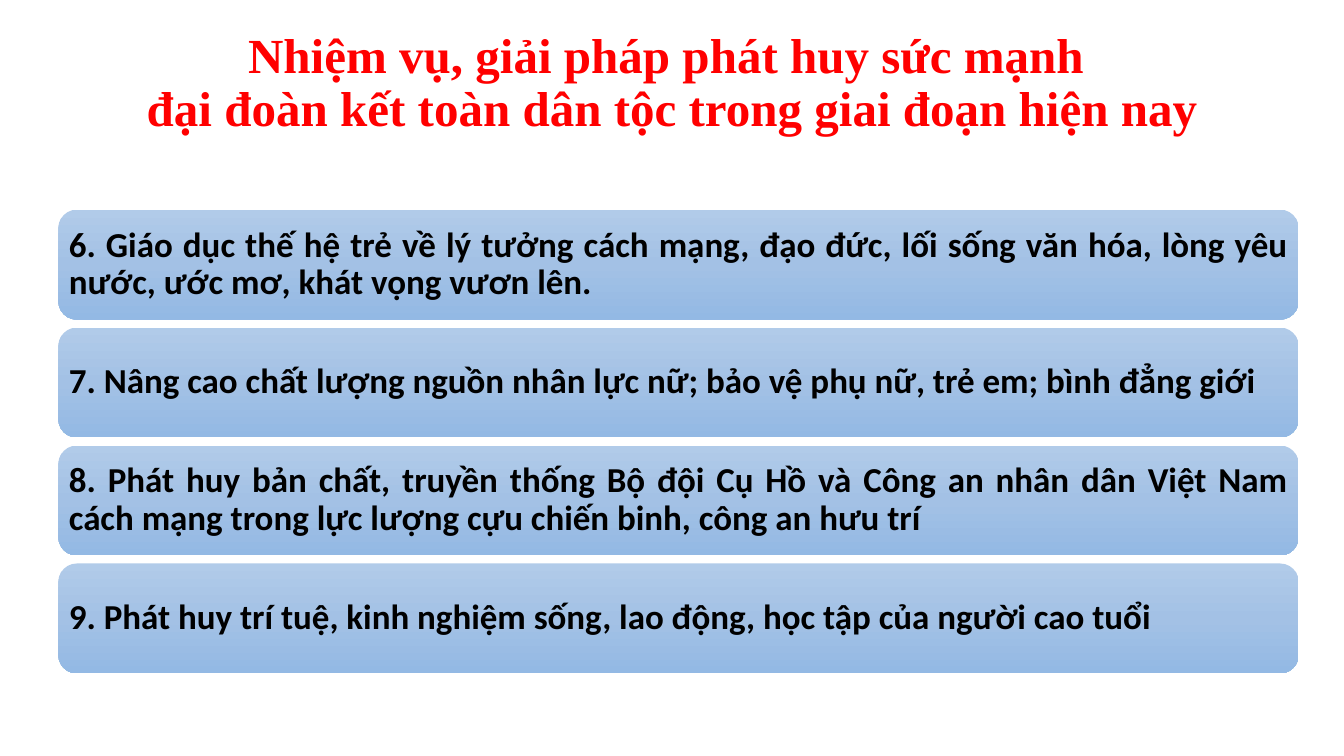
from copy import deepcopy
from dataclasses import dataclass

from pptx import Presentation
from pptx.dml.color import RGBColor
from pptx.enum import shapes, text
from pptx.oxml.ns import qn
from pptx.util import Inches, Pt


@dataclass(frozen=True)
class Theme:
    red: str = "FF0000"
    ink: str = "000000"
    stops: tuple[str, ...] = ("B1CBE9", "A3C1E5", "93B9E4")
    head: str = "Times New Roman"
    body: str = "Calibri"
    big: int = 35
    mid: int = 25


@dataclass(frozen=True)
class Card:
    words: str
    align: text.PP_ALIGN = text.PP_ALIGN.LEFT


THEME = Theme()
LEFT, TOP, WIDTH, HEIGHT, PITCH = 0.58, 2.08, 12.3, 1.09, 1.17
TITLE = ("Nhiệm vụ, giải pháp phát huy sức mạnh \v"
         "đại đoàn kết toàn dân tộc trong giai đoạn hiện nay")
CARDS = (
    Card("6. Giáo dục thế hệ trẻ về lý tưởng cách mạng, đạo đức, lối sống văn hóa, "
         "lòng yêu nước, ước mơ, khát vọng vươn lên.", text.PP_ALIGN.JUSTIFY),
    Card("7. Nâng cao chất lượng nguồn nhân lực nữ; bảo vệ phụ nữ, trẻ em; "
         "bình đẳng giới"),
    Card("8. Phát huy bản chất, truyền thống Bộ đội Cụ Hồ và Công an nhân dân Việt Nam "
         "cách mạng trong lực lượng cựu chiến binh, công an hưu trí",
         text.PP_ALIGN.JUSTIFY),
    Card("9. Phát huy trí tuệ, kinh nghiệm sống, lao động, học tập của người cao tuổi"),
)


def place(shape, left: float, top: float, width: float, height: float) -> None:
    box = {"left": left, "top": top, "width": width, "height": height}
    for name, value in box.items():
        setattr(shape, name, Inches(value))


def write(shape, words: str, align: text.PP_ALIGN, face: str, size: int,
          color: str, pads: dict[str, float]) -> None:
    frame = shape.text_frame
    frame.text = words
    look = {"word_wrap": True, "auto_size": text.MSO_AUTO_SIZE.NONE,
            "vertical_anchor": text.MSO_ANCHOR.MIDDLE}
    look |= {f"margin_{side}": Inches(pad) for side, pad in pads.items()}
    for name, value in look.items():
        setattr(frame, name, value)
    para = frame.paragraphs[0]
    para.alignment, para.line_spacing = align, 0.9
    for run in para.runs:
        for name, value in {"name": face, "size": Pt(size), "bold": True}.items():
            setattr(run.font, name, value)
        run.font.color.rgb = RGBColor.from_string(color)


def shade(shape, colors: tuple[str, ...]) -> None:
    """Fill from top to bottom with evenly spaced colour stops."""
    fill = shape.fill
    fill.gradient()
    fill.gradient_angle = 270
    stops = shape.element.spPr.find(f".//{qn('a:gsLst')}")
    while len(stops) < len(colors):
        stops.append(deepcopy(stops[0]))
    for i, (stop, color) in enumerate(zip(fill.gradient_stops, colors)):
        stop.position = i / (len(colors) - 1)
        stop.color.rgb = RGBColor.from_string(color)


def draw(slide, card: Card, row: int) -> None:
    shape = slide.shapes.add_shape(
        shapes.MSO_SHAPE.ROUNDED_RECTANGLE, Inches(LEFT), Inches(TOP + row * PITCH),
        Inches(WIDTH), Inches(HEIGHT))
    shape.shadow.inherit = False
    shape.line.fill.background()
    shade(shape, THEME.stops)
    pads = dict.fromkeys(("left", "right", "top", "bottom"), 0.05)
    write(shape, card.words, card.align, THEME.body, THEME.mid, THEME.ink, pads)


def main() -> None:
    deck = Presentation()
    deck.slide_width, deck.slide_height = Inches(13.33), Inches(7.5)
    slide = deck.slides.add_slide(deck.slide_layouts[5])
    title = slide.shapes.title
    place(title, 0.92, 0.4, 11.5, 1.39)
    write(title, TITLE, text.PP_ALIGN.CENTER, THEME.head, THEME.big, THEME.red,
          {"left": 0.1, "right": 0.1, "top": 0, "bottom": 0.53})
    for row, card in enumerate(CARDS):
        draw(slide, card, row)
    deck.save("out.pptx")


if __name__ == "__main__":
    main()
